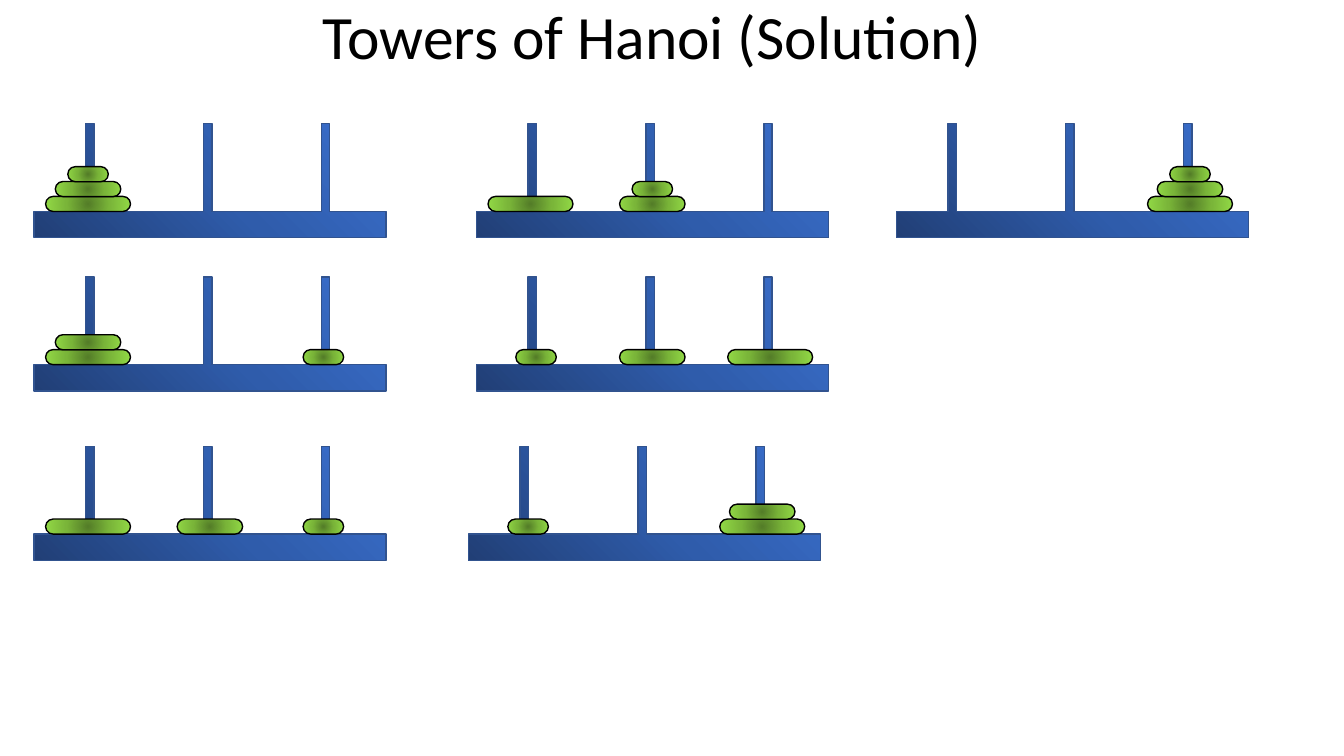
import pptx
import pptx.dml.color
import pptx.enum.shapes
import pptx.enum.text
import pptx.oxml.ns
import pptx.util
from lxml import etree

Cm = pptx.util.Cm
Pt = pptx.util.Pt

# Distances in cm, measured from the left top corner of each tower board
BOARD_WIDTH, BOARD_HEIGHT, BASE_TOP = 8.87, 2.87, 2.21
PEG_LEFT, PEG_PITCH, PEG_WIDTH = 1.3, 2.97, 0.21
DISK_CENTERS = (1.36, 4.43, 7.4)
LONE_SMALL_CENTERS = (1.5, 4.43, 7.29)
DISK_WIDTHS = {"large": 2.14, "medium": 1.65, "small": 1.02}
DISK_HEIGHT, DISK_STEP = 0.38, 0.375

# Each state: left, top, then the disks on the three pegs from the bottom up
STATES = [
    (0.86, 3.12, (["large", "medium", "small"], [], [])),
    (0.86, 6.98, (["large", "medium"], [], ["small"])),
    (0.86, 11.25, (["large"], ["medium"], ["small"])),
    (12.01, 3.12, (["large"], ["medium", "small"], [])),
    (12.01, 6.98, (["small"], ["medium"], ["large"])),
    (11.81, 11.25, (["small"], [], ["large", "medium"])),
    (22.59, 3.12, ([], [], ["large", "medium", "small"])),
]


def color(hex_code):
    return pptx.dml.color.RGBColor.from_string(hex_code)


def write(frame, text, size, font, ink, align, spacing):
    frame.word_wrap = True
    frame.vertical_anchor = pptx.enum.text.MSO_ANCHOR.MIDDLE
    paragraph = frame.paragraphs[0]
    paragraph.alignment = align
    paragraph.line_spacing = spacing
    run = paragraph.add_run()
    run.text = text
    run.font.size = Pt(size)
    run.font.name = font
    run.font.color.rgb = color(ink)


def fill_radially(shape, stops, focus):
    """Fill with a circular gradient; focus is left, top, right, bottom in percent."""
    shape.fill.solid()
    properties = shape._element.spPr
    qn = pptx.oxml.ns.qn
    gradient = etree.Element(qn("a:gradFill"), rotWithShape="1")
    stop_list = etree.SubElement(gradient, qn("a:gsLst"))
    for position, hex_code in zip((0, 50, 100), stops):
        stop = etree.SubElement(stop_list, qn("a:gs"), pos=str(position * 1000))
        etree.SubElement(stop, qn("a:srgbClr"), val=hex_code)
    circle = etree.SubElement(gradient, qn("a:path"), attrib={"path": "circle"})
    sides = {side: str(value * 1000) for side, value in zip("ltrb", focus)}
    etree.SubElement(circle, qn("a:fillToRect"), attrib=sides)
    properties.replace(properties.find(qn("a:solidFill")), gradient)


class HanoiSlide:
    font = "Calibri"
    ink = "000000"
    board_line = "31538F"
    board_stops = ("213F76", "2F5CAB", "3A6FCD")
    disk_stops = ("547D28", "7AB539", "92D946")

    def __init__(self, presentation):
        self.slide = presentation.slides.add_slide(presentation.slide_layouts[6])

    def title(self, text):
        heading = self.slide.shapes.add_textbox(Cm(0.86), 0, Cm(31.17), Cm(1.98))
        write(heading.text_frame, text, size=44, font=self.font, ink=self.ink,
              align=pptx.enum.text.PP_ALIGN.CENTER, spacing=0.9)

    def finish(self, shape, stops, focus, line):
        shape.shadow.inherit = False
        fill_radially(shape, stops, focus)
        shape.line.color.rgb = color(line)
        shape.line.width = Pt(1)

    def board(self, left, top):
        """Draw the base and its three pegs as one outline."""
        outline = [(0, BASE_TOP)]
        for peg in range(3):
            peg_left = PEG_LEFT + peg * PEG_PITCH
            peg_right = peg_left + PEG_WIDTH
            outline += [(peg_left, BASE_TOP), (peg_left, 0),
                        (peg_right, 0), (peg_right, BASE_TOP)]
        outline += [(BOARD_WIDTH, BASE_TOP), (BOARD_WIDTH, BOARD_HEIGHT),
                    (0, BOARD_HEIGHT)]
        points = [(Cm(left + x), Cm(top + y)) for x, y in outline]
        builder = self.slide.shapes.build_freeform(*points[0])
        builder.add_line_segments(points[1:], close=True)
        self.finish(builder.convert_to_shape(), self.board_stops,
                    (0, 100, 100, 0), self.board_line)

    def disk(self, center, top, width):
        disk = self.slide.shapes.add_shape(
            pptx.enum.shapes.MSO_SHAPE.ROUNDED_RECTANGLE,
            Cm(center - width / 2), Cm(top), Cm(width), Cm(DISK_HEIGHT))
        disk.adjustments[0] = 0.5
        self.finish(disk, self.disk_stops, (50, 50, 50, 50), self.ink)

    def state(self, left, top, pegs):
        self.board(left, top)
        for peg, disks in enumerate(pegs):
            centers = LONE_SMALL_CENTERS if disks == ["small"] else DISK_CENTERS
            for level, size in enumerate(disks):
                disk_top = top + BASE_TOP - DISK_HEIGHT - level * DISK_STEP
                self.disk(left + centers[peg], disk_top, DISK_WIDTHS[size])


def main():
    presentation = pptx.Presentation()
    presentation.slide_width = Cm(33.87)
    presentation.slide_height = Cm(19.05)
    hanoi = HanoiSlide(presentation)
    hanoi.title("Towers of Hanoi (Solution)")
    for left, top, pegs in STATES:
        hanoi.state(left, top, pegs)
    presentation.save("out.pptx")


if __name__ == "__main__":
    main()
